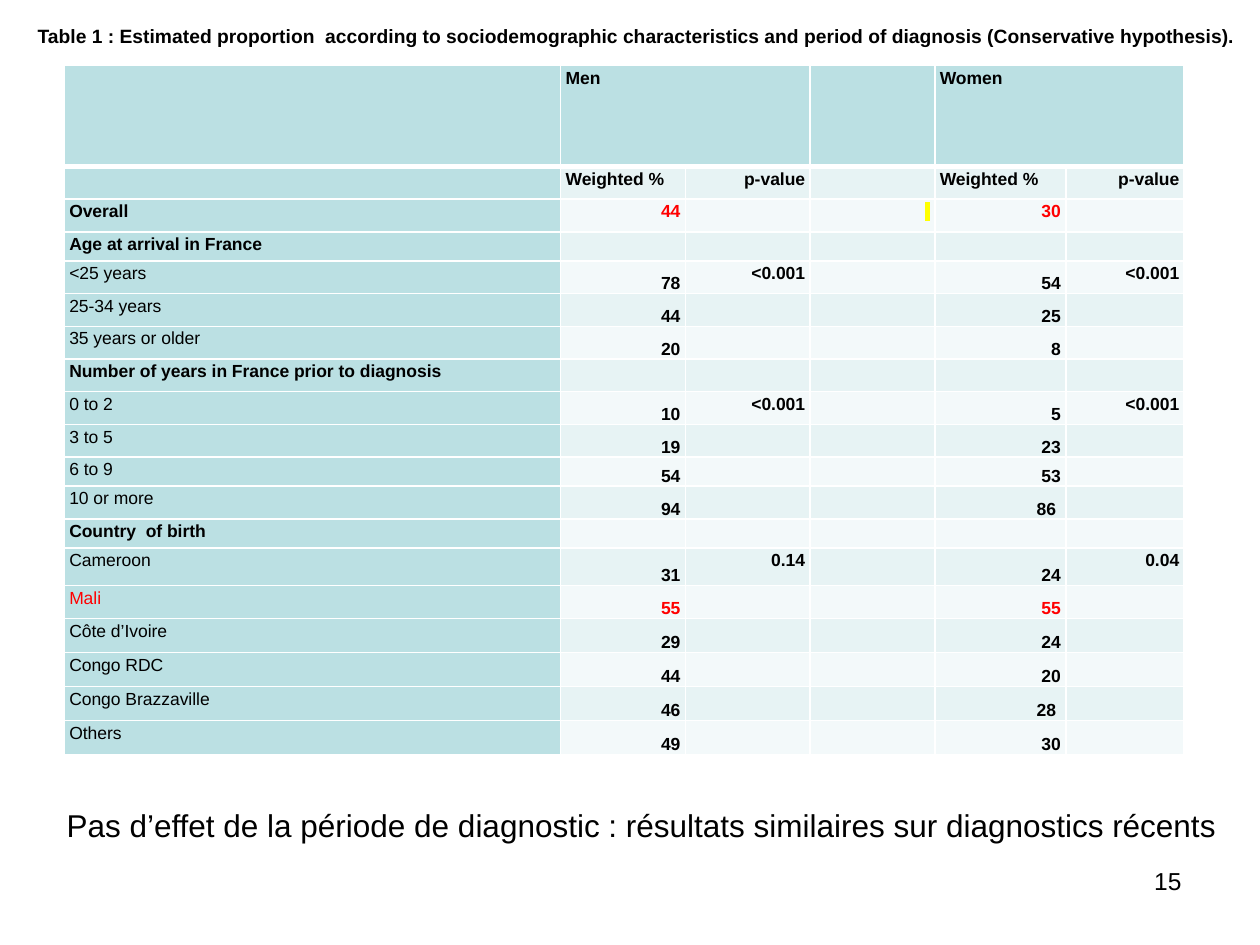
from lxml import etree
from pptx import Presentation
from pptx import util as u
from pptx.dml.color import RGBColor
from pptx.enum import text
from pptx.oxml.ns import qn

COLORS = {"ink": "000000", "alert": "FF0000", "head": "BBE0E3", "odd": "E7F3F4",
          "even": "F3F9FA", "rule": "FFFFFF", "marker": "FFFF00"}
FONT = "Arial"
GRID = u.Inches(0.01)  # the slide is 1000 x 750 grid units
LEFT, RIGHT = text.PP_ALIGN.LEFT, text.PP_ALIGN.RIGHT
TOP, BOTTOM = text.MSO_ANCHOR.TOP, text.MSO_ANCHOR.BOTTOM

deck = Presentation()
deck.slide_width, deck.slide_height = 1000 * GRID, 750 * GRID
slide = deck.slides.add_slide(deck.slide_layouts[6])


def write(paragraph, words, size, bold=False, color="ink", align=LEFT):
    paragraph.text = words
    paragraph.alignment = align
    font = paragraph.font
    font.name, font.size, font.bold = FONT, u.Pt(size), bold
    font.color.rgb = RGBColor.from_string(COLORS[color])


def rule_and_fill(cell, fill, bottom_width=1):
    """Draw white rules on all four sides, then fill the cell."""
    properties = cell._tc.get_or_add_tcPr()
    for side in "LRTB":
        width = bottom_width if side == "B" else 1
        line = etree.SubElement(properties, qn(f"a:ln{side}"), w=str(u.Pt(width)))
        solid = etree.SubElement(line, qn("a:solidFill"))
        etree.SubElement(solid, qn("a:srgbClr"), val=COLORS["rule"])
    cell.fill.solid()
    cell.fill.fore_color.rgb = RGBColor.from_string(COLORS[fill])


# label, men %, men p-value, gap, women %, women p-value
ROWS = [
    ("", "Men", "", "", "Women", ""),
    ("", "Weighted %", "p-value", "", "Weighted %", "p-value"),
    ("Overall", "44", "", "", "30", ""),
    ("Age at arrival in France", "", "", "", "", ""),
    ("<25 years", "78", "<0.001", "", "54", "<0.001"),
    ("25-34 years", "44", "", "", "25", ""),
    ("35 years or older", "20", "", "", "8", ""),
    ("Number of years in France prior to diagnosis", "", "", "", "", ""),
    ("0 to 2", "10", "<0.001", "", "5", "<0.001"),
    ("3 to 5", "19", "", "", "23", ""),
    ("6 to 9", "54", "", "", "53", ""),
    ("10 or more", "94", "", "", "86 ", ""),
    ("Country  of birth", "", "", "", "", ""),
    ("Cameroon", "31", "0.14", "", "24", "0.04"),
    ("Mali", "55", "", "", "55", ""),
    ("Côte d’Ivoire", "29", "", "", "24", ""),
    ("Congo RDC", "44", "", "", "20", ""),
    ("Congo Brazzaville", "46", "", "", "28 ", ""),
    ("Others", "49", "", "", "30", ""),
]
COLUMN_WIDTHS = [394, 99, 99, 99, 104, 94]
ROW_HEIGHTS = [80, 26, 26, 23] + [26] * 6 + [23, 26, 23, 30, 26] + [27] * 4
PERCENT_COLUMNS = (1, 4)
OVERALL = 2

table = slide.shapes.add_table(len(ROWS), len(COLUMN_WIDTHS), 51 * GRID, 52 * GRID,
                               sum(COLUMN_WIDTHS) * GRID, sum(ROW_HEIGHTS) * GRID).table
for column, width in zip(table.columns, COLUMN_WIDTHS):
    column.width = width * GRID

for r, (entries, height) in enumerate(zip(ROWS, ROW_HEIGHTS)):
    table.rows[r].height = height * GRID
    label = entries[0]
    is_heading = r <= OVERALL or not any(entries[1:])
    for c, entry in enumerate(entries):
        cell = table.cell(r, c)
        shade = "head" if r == 0 or c == 0 else "odd" if r % 2 else "even"
        rule_and_fill(cell, shade, bottom_width=3 if r == 0 else 1)
        cell.margin_left = cell.margin_right = 4 * GRID
        cell.margin_top = cell.margin_bottom = 0

        is_percent = c in PERCENT_COLUMNS and r >= OVERALL
        is_red = label == "Mali" or (label == "Overall" and is_percent)
        is_left = c == 0 or r == 0 or (r == 1 and c in PERCENT_COLUMNS)
        paragraph = cell.text_frame.paragraphs[0]
        write(paragraph, entry, 10, bold=c > 0 or is_heading,
              color="alert" if is_red else "ink", align=LEFT if is_left else RIGHT)
        if not entry:
            etree.SubElement(paragraph._p, qn("a:endParaRPr"), sz="1000")
        paragraph.line_spacing = 1.15
        cell.vertical_anchor = TOP
        if is_percent and not is_heading:
            cell.vertical_anchor = BOTTOM
            paragraph.space_after = u.Pt(10)

for c in PERCENT_COLUMNS:
    table.cell(0, c).merge(table.cell(0, c + 1))

# Highlighted space in the gap column of the overall row
gap = table.cell(OVERALL, 3).text_frame.paragraphs[0]
marker = gap.add_run()
marker.text = " "
marker.font.size = u.Pt(10)
highlight = etree.SubElement(marker._r.get_or_add_rPr(), qn("a:highlight"))
etree.SubElement(highlight, qn("a:srgbClr"), val=COLORS["marker"])

# words, left, top, width, height, size, bold, alignment, wrap
CAPTIONS = [
    ("15 ", 720, 682, 233, 52, 14, False, RIGHT, True),
    ("Table 1 : Estimated proportion  according to sociodemographic characteristics "
     "and period of diagnosis (Conservative hypothesis).",
     20, 14, 982, 30, 11, True, LEFT, False),
    ("Pas d’effet de la période de diagnostic : résultats similaires sur diagnostics récents",
     43, 635, 941, 40, 18, False, LEFT, False),
]
for words, left, top, width, height, size, bold, align, wrap in CAPTIONS:
    frame = slide.shapes.add_textbox(left * GRID, top * GRID,
                                     width * GRID, height * GRID).text_frame
    frame.word_wrap = wrap
    write(frame.paragraphs[0], words, size, bold, align=align)

deck.save("out.pptx")
